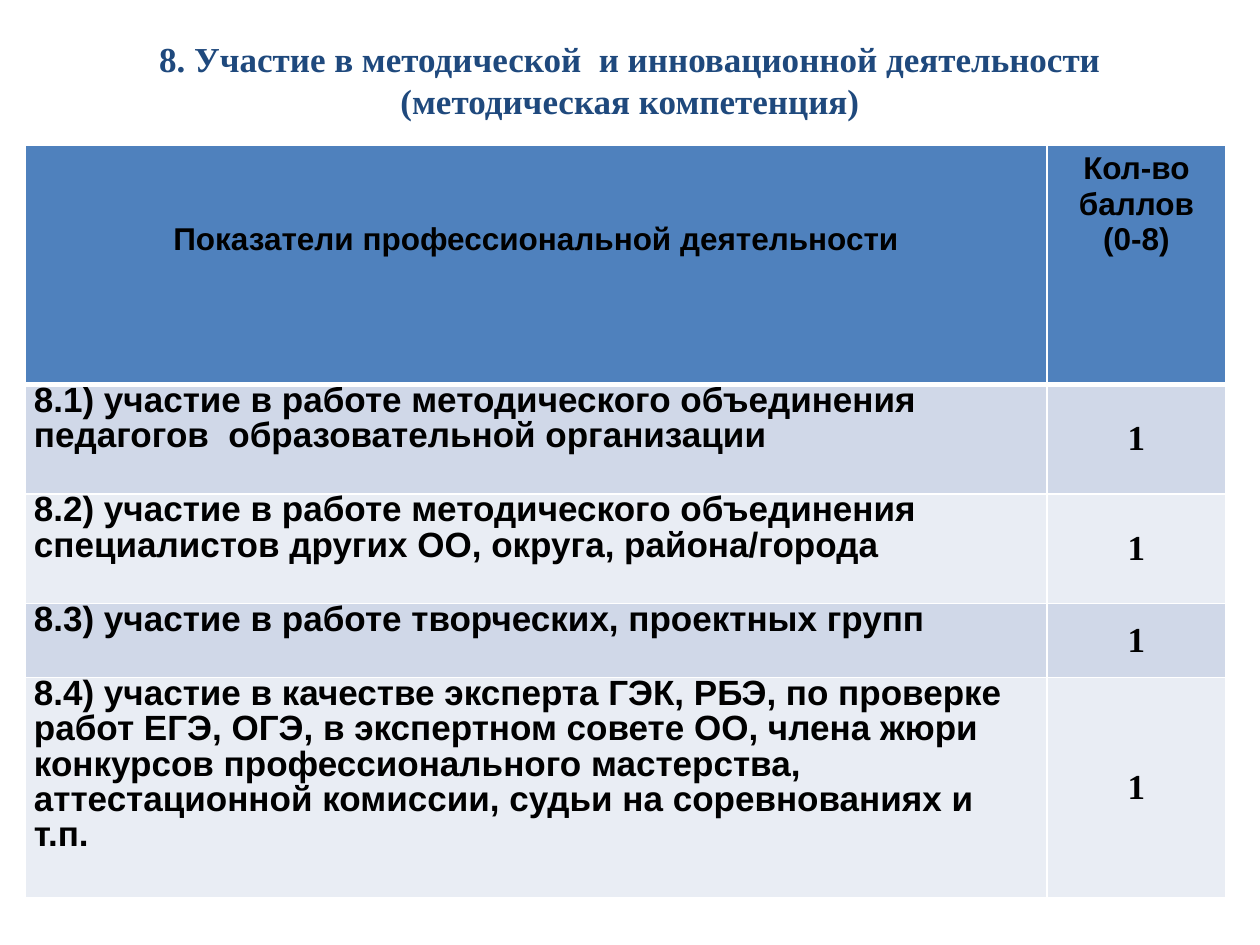
from lxml import etree
from pptx import Presentation
from pptx.dml.color import RGBColor
from pptx.enum.text import MSO_ANCHOR, PP_ALIGN
from pptx.oxml.ns import qn
from pptx.util import Emu, Inches, Pt

CENTER, LEFT = PP_ALIGN.CENTER, PP_ALIGN.LEFT
TOP, MIDDLE = MSO_ANCHOR.TOP, MSO_ANCHOR.MIDDLE

NAVY = RGBColor(0x1F, 0x49, 0x7D)
BLACK = RGBColor(0, 0, 0)
WHITE = RGBColor(0xFF, 0xFF, 0xFF)
HEADER = RGBColor(0x4F, 0x81, 0xBD)
BANDS = (RGBColor(0xD0, 0xD8, 0xE8), RGBColor(0xE9, 0xED, 0xF4))
SANS, SERIF = "Arial", "Times New Roman"

TITLE = ("8. Участие в методической  и инновационной деятельности "
         "(методическая компетенция)")
HEADINGS = ("Показатели профессиональной деятельности", "Кол-во баллов (0-8)")
SCORES = (
    ("8.1) участие в работе методического объединения педагогов  "
     "образовательной организации", "1"),
    ("8.2) участие в работе методического объединения специалистов других ОО, "
     "округа, района/города", "1"),
    ("8.3) участие в работе творческих, проектных групп", "1"),
    ("8.4) участие в качестве эксперта ГЭК, РБЭ, по проверке работ ЕГЭ, ОГЭ, "
     "в экспертном совете ОО, члена жюри конкурсов профессионального мастерства, "
     "аттестационной комиссии, судьи на соревнованиях и т.п.", "1"),
)
COL_SHARES = (8.11, 1.42)
ROW_SHARES = (1.9, 0.87, 0.87, 0.59, 1.75)


def write(tf, text, size, name, color=BLACK, align=CENTER):
    p = tf.paragraphs[0]
    p.text = text
    p.alignment = align
    p.font.size, p.font.name, p.font.bold = Pt(size), name, True
    p.font.color.rgb = color
    return p


def set_borders(cell, bottom):
    """White cell edges; the bottom one has its own width in points."""
    tcPr = cell._tc.get_or_add_tcPr()
    widths = {"a:lnL": 1, "a:lnR": 1, "a:lnT": 1, "a:lnB": bottom}
    for i, (tag, width) in enumerate(widths.items()):
        ln = etree.Element(qn(tag), w=str(Pt(width)))
        fill = etree.SubElement(ln, qn("a:solidFill"))
        etree.SubElement(fill, qn("a:srgbClr"), val=str(WHITE))
        tcPr.insert(i, ln)


def style_cell(cell, fill, anchor, margins, bottom=1):
    cell.fill.solid()
    cell.fill.fore_color.rgb = fill
    cell.vertical_anchor = anchor
    side, top, base = (Inches(m) for m in margins)
    cell.margin_left = cell.margin_right = side
    cell.margin_top, cell.margin_bottom = top, base
    set_borders(cell, bottom)


def add_title(s, x, y, w, h):
    tf = s.shapes.add_textbox(x, y, w, h).text_frame
    tf.word_wrap = True
    tf.margin_top = 0
    write(tf, TITLE, 20, SERIF, NAVY)


def add_score_table(s, x, y, w, h):
    table = s.shapes.add_table(len(ROW_SHARES), len(COL_SHARES), x, y, w, h).table
    for col, share in zip(table.columns, COL_SHARES):
        col.width = Emu(int(w * share / sum(COL_SHARES)))
    for row, share in zip(table.rows, ROW_SHARES):
        row.height = Emu(int(h * share / sum(ROW_SHARES)))

    # Header: the first heading sits level with the last line of the second
    for c, (text, top) in enumerate(zip(HEADINGS, (0.61, 0.05))):
        cell = table.cell(0, c)
        style_cell(cell, HEADER, TOP, (0.1, top, 0.05), bottom=3)
        write(cell.text_frame, text, 18, SANS)

    # Indicators and their scores
    for r, (indicator, score) in enumerate(SCORES, start=1):
        fill = BANDS[(r - 1) % 2]
        left, right = table.cell(r, 0), table.cell(r, 1)
        style_cell(left, fill, TOP, (0.07, 0, 0))
        style_cell(right, fill, MIDDLE, (0.07, 0, 0))
        write(left.text_frame, indicator, 20, SANS, align=LEFT).line_spacing = 0.9
        write(right.text_frame, score, 20, SERIF)


def main():
    prs = Presentation()
    prs.slide_width, prs.slide_height = Inches(10), Inches(7.5)
    s = prs.slides.add_slide(prs.slide_layouts[6])
    add_title(s, Inches(0.5), Inches(0.3), Inches(9), Inches(1.25))
    add_score_table(s, Inches(0.2), Inches(1.15), Inches(9.53), Inches(5.98))
    prs.save("out.pptx")


if __name__ == "__main__":
    main()
